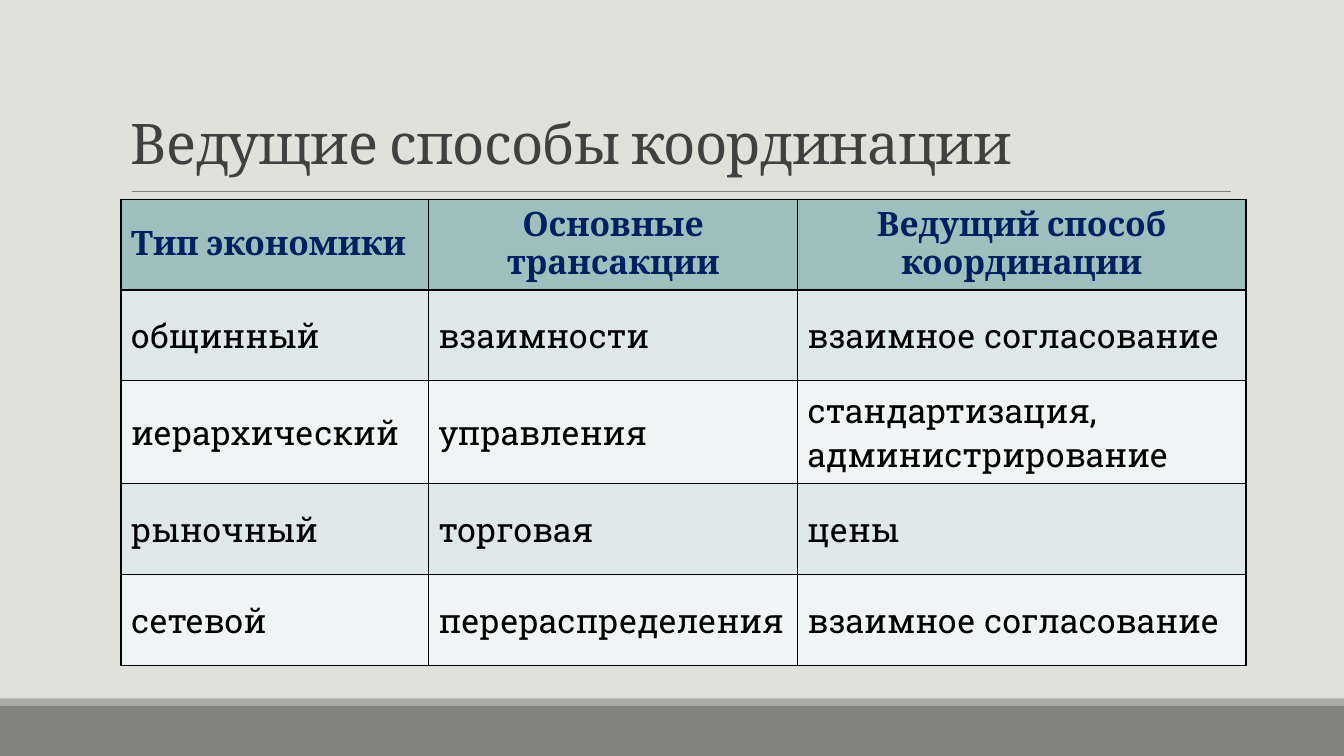
from dataclasses import dataclass

from lxml import etree
from pptx import Presentation
from pptx import util as u
from pptx.dml.color import RGBColor
from pptx.enum import shapes, text
from pptx.oxml.ns import qn


@dataclass(frozen=True)
class Theme:
    background: str = "E1E1DB"
    footer: str = "82847C"
    footer_edge: str = "ACADA8"
    rule: str = "808080"
    title: str = "404040"
    header: str = "002060"
    body: str = "000000"
    border: str = "000000"
    header_fill: str = "9DBFBE"
    band_fills: tuple = ("DFE8E8", "EFF4F4")
    head_font: str = "Cambria"
    body_font: str = "Roboto Slab"
    title_size: int = 40
    table_size: int = 24


THEME = Theme()
WIDTH, HEIGHT = 33.87, 19.05

COLUMNS = (7.75, 9.3, 11.3)
ROW_HEIGHTS = (2.2, 2.29, 2.59, 2.29, 2.29)
ROWS = (
    ("Тип экономики", "Основные трансакции", "Ведущий способ координации"),
    ("общинный", "взаимности", "взаимное согласование"),
    ("иерархический", "управления", "стандартизация, администрирование"),
    ("рыночный", "торговая", "цены"),
    ("сетевой", "перераспределения", "взаимное согласование"),
)


def apply(target, values):
    for name, value in values.items():
        setattr(target, name, value)


def paint(fill, color):
    fill.solid()
    fill.fore_color.rgb = RGBColor.from_string(color)


def add_text(p, content, color, **font):
    r = p.add_run()
    r.text = content
    apply(r.font, font)
    r.font.color.rgb = RGBColor.from_string(color)
    return r


def set_borders(cell, color):
    tc_pr = cell._tc.get_or_add_tcPr()
    for i, side in enumerate(("lnL", "lnR", "lnT", "lnB")):
        ln = etree.Element(qn(f"a:{side}"), w=str(u.Pt(1)))
        fill = etree.SubElement(ln, qn("a:solidFill"))
        etree.SubElement(fill, qn("a:srgbClr"), val=color)
        tc_pr.insert(i, ln)


def add_footer(s, left, top, width, height):
    edge = 0.18
    bands = ((top, edge, THEME.footer_edge),
             (top + edge, height - edge, THEME.footer))
    for y, h, color in bands:
        sp = s.shapes.add_shape(shapes.MSO_SHAPE.RECTANGLE,
                                u.Cm(left), u.Cm(y), u.Cm(width), u.Cm(h))
        sp.shadow.inherit = False
        paint(sp.fill, color)
        sp.line.fill.background()


def add_title(s, left, top, width, height, content):
    sp = s.shapes.add_textbox(u.Cm(left), u.Cm(top), u.Cm(width), u.Cm(height))
    tf = sp.text_frame
    apply(tf, {"word_wrap": True, "vertical_anchor": text.MSO_ANCHOR.BOTTOM})
    p = tf.paragraphs[0]
    p.line_spacing = 0.85
    r = add_text(p, content, THEME.title, name=THEME.head_font,
                 size=u.Pt(THEME.title_size))
    r._r.get_or_add_rPr().set("spc", "-50")

    # Rule below the title
    x, y = left + 0.28, top + height + 0.25
    line = s.shapes.add_connector(shapes.MSO_CONNECTOR.STRAIGHT, u.Cm(x), u.Cm(y),
                                  u.Cm(x + width - 0.1), u.Cm(y))
    line.line.width = u.Pt(0.5)
    line.line.color.rgb = RGBColor.from_string(THEME.rule)
    etree.SubElement(line._element.spPr, qn("a:effectLst"))


def add_coordination_table(s, left, top):
    frame = s.shapes.add_table(len(ROWS), len(COLUMNS), u.Cm(left), u.Cm(top),
                               u.Cm(sum(COLUMNS)), u.Cm(sum(ROW_HEIGHTS)))
    table = frame.table
    for column, width in zip(table.columns, COLUMNS):
        column.width = u.Cm(width)
    for row, height in zip(table.rows, ROW_HEIGHTS):
        row.height = u.Cm(height)

    for i, values in enumerate(ROWS):
        header = i == 0
        fill = THEME.header_fill if header else THEME.band_fills[(i - 1) % 2]
        color = THEME.header if header else THEME.body
        font = {"name": THEME.head_font if header else THEME.body_font,
                "size": u.Pt(THEME.table_size), "bold": header}
        for j, value in enumerate(values):
            cell = table.cell(i, j)
            cell.vertical_anchor = text.MSO_ANCHOR.MIDDLE
            paint(cell.fill, fill)
            set_borders(cell, THEME.border)
            p = cell.text_frame.paragraphs[0]
            if header and j > 0:
                p.alignment = text.PP_ALIGN.CENTER
            add_text(p, value, color, **font)


def build_slide(prs):
    s = prs.slides.add_slide(prs.slide_layouts[6])
    paint(s.background.fill, THEME.background)
    add_footer(s, 0, 17.6, WIDTH, HEIGHT - 17.6)
    add_title(s, 3.05, 0.79, 27.78, 3.78, "Ведущие способы координации")
    add_coordination_table(s, 3.05, 5.02)


def main():
    prs = Presentation()
    apply(prs, {"slide_width": u.Cm(WIDTH), "slide_height": u.Cm(HEIGHT)})
    build_slide(prs)
    prs.save("out.pptx")


if __name__ == "__main__":
    main()
